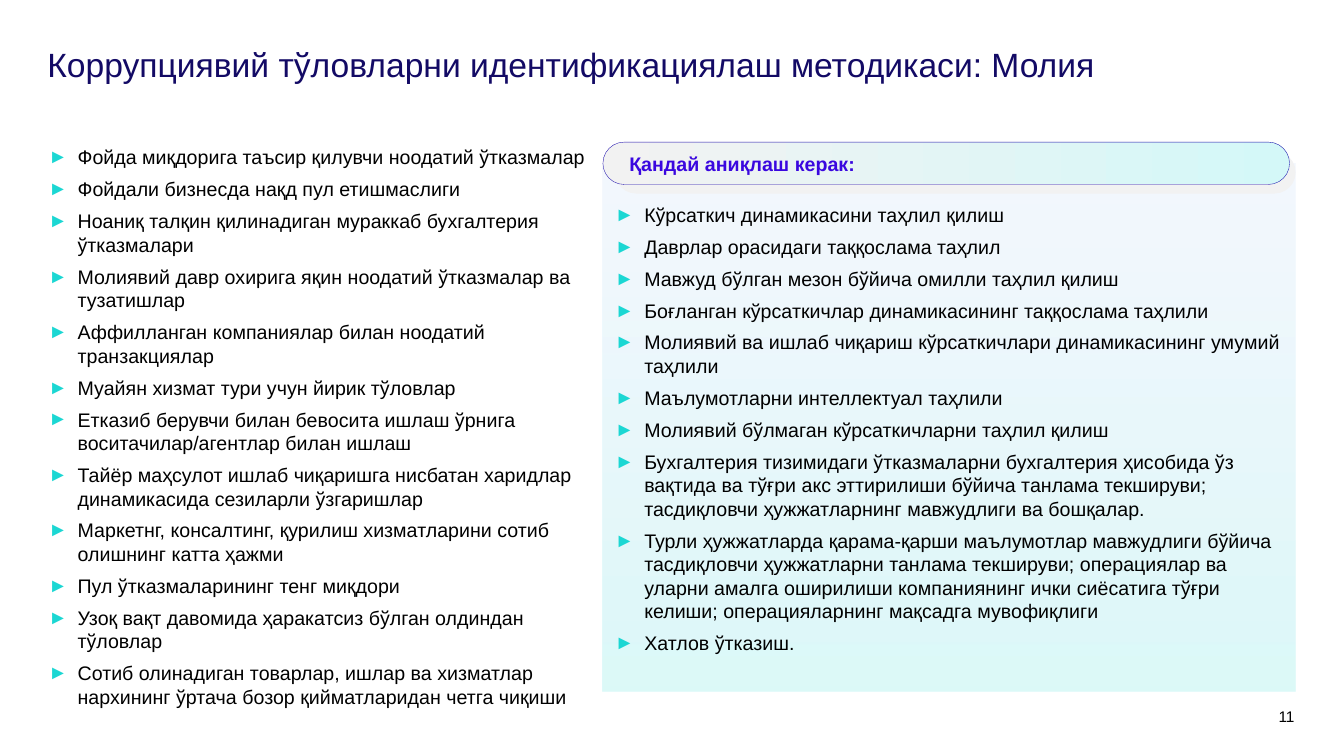
from dataclasses import dataclass

from lxml.etree import SubElement
from pptx import Presentation
from pptx.dml.color import RGBColor
from pptx.enum.shapes import MSO_SHAPE
from pptx.enum.text import MSO_ANCHOR, PP_ALIGN
from pptx.oxml.ns import qn
from pptx.util import Inches, Pt

COLORS = {
    "text": "000000", "title": "130A65", "heading": "3A07DF", "outline": "2112AE",
    "bullet": "1BD7D3", "gray": "F2F2F2", "pale": "D4F8F8",
    "panel_top": "B1C7F7", "panel_bottom": "1BD7D3",
}
FONT = "Arial"
BULLET_INDENT = 0.29

WARNING_SIGNS = [
    "Фойда миқдорига таъсир қилувчи ноодатий ўтказмалар",
    "Фойдали бизнесда нақд пул етишмаслиги",
    "Ноаниқ талқин қилинадиган мураккаб бухгалтерия ўтказмалари",
    "Молиявий давр охирига яқин ноодатий ўтказмалар ва тузатишлар",
    "Аффилланган компаниялар билан ноодатий транзакциялар",
    "Муайян хизмат тури учун йирик тўловлар",
    "Етказиб берувчи билан бевосита ишлаш ўрнига воситачилар/агентлар билан ишлаш",
    "Тайёр маҳсулот ишлаб чиқаришга нисбатан харидлар динамикасида сезиларли ўзгаришлар",
    "Маркетнг, консалтинг, қурилиш хизматларини сотиб олишнинг катта ҳажми",
    "Пул ўтказмаларининг тенг миқдори",
    "Узоқ вақт давомида ҳаракатсиз бўлган олдиндан тўловлар",
    "Сотиб олинадиган товарлар, ишлар ва хизматлар нархининг ўртача бозор "
    "қийматларидан четга чиқиши",
]
DETECTION_METHODS = [
    "Кўрсаткич динамикасини таҳлил қилиш",
    "Даврлар орасидаги таққослама таҳлил",
    "Мавжуд бўлган мезон бўйича омилли таҳлил қилиш",
    "Боғланган кўрсаткичлар динамикасининг таққослама таҳлили",
    "Молиявий ва ишлаб чиқариш кўрсаткичлари динамикасининг умумий таҳлили",
    "Маълумотларни интеллектуал таҳлили",
    "Молиявий бўлмаган кўрсаткичларни таҳлил қилиш",
    "Бухгалтерия тизимидаги ўтказмаларни бухгалтерия ҳисобида ўз вақтида ва тўғри акс "
    "эттирилиши бўйича танлама текшируви; тасдиқловчи ҳужжатларнинг мавжудлиги ва бошқалар.",
    "Турли ҳужжатларда қарама-қарши маълумотлар мавжудлиги бўйича тасдиқловчи ҳужжатларни "
    "танлама текшируви; операциялар ва уларни амалга оширилиши компаниянинг ички сиёсатига "
    "тўғри келиши; операцияларнинг мақсадга мувофиқлиги",
    "Хатлов ўтказиш.",
]


@dataclass(frozen=True)
class Box:
    left: float
    top: float
    width: float
    height: float

    def lengths(self):
        return [Inches(value) for value in (self.left, self.top, self.width, self.height)]


@dataclass(frozen=True)
class Stop:
    position: float
    color: str
    opacity: int = 100


def color(name: str) -> RGBColor:
    return RGBColor.from_string(COLORS[name])


def add_bullet(paragraph) -> None:
    properties = paragraph._p.get_or_add_pPr()
    properties.set("marL", str(Inches(BULLET_INDENT)))
    properties.set("indent", str(-Inches(BULLET_INDENT)))
    bullet_color = SubElement(properties, qn("a:buClr"))
    SubElement(bullet_color, qn("a:srgbClr"), val=COLORS["bullet"])
    SubElement(properties, qn("a:buFont"), typeface=FONT)
    SubElement(properties, qn("a:buChar"), char="►")


def write_text(shape, *texts: str, size: float = 14, ink: str = "text", bold: bool = False,
               align=PP_ALIGN.LEFT, anchor=MSO_ANCHOR.TOP, insets=(0, 0, 0, 0),
               bullets: bool = False, line_spacing=None) -> None:
    """Fill a shape with paragraphs; insets are left, top, right, bottom in inches."""
    frame = shape.text_frame
    frame.word_wrap = True
    frame.vertical_anchor = anchor
    (frame.margin_left, frame.margin_top,
     frame.margin_right, frame.margin_bottom) = map(Inches, insets)
    for index, text in enumerate(texts):
        paragraph = frame.add_paragraph() if index else frame.paragraphs[0]
        if bullets:
            add_bullet(paragraph)
            paragraph.space_after = Pt(6)
        paragraph.alignment = align
        if line_spacing:
            paragraph.line_spacing = line_spacing
        run = paragraph.add_run()
        run.text = text
        run.font.name, run.font.size, run.font.bold = FONT, Pt(size), bold
        run.font.color.rgb = color(ink)


def add_panel(slide, kind, box: Box, stops: list[Stop], angle: float = 0, outline: str = ""):
    """Add a shape with a solid fill for one stop, or a gradient for two."""
    shape = slide.shapes.add_shape(kind, *box.lengths())
    shape.shadow.inherit = False
    if kind == MSO_SHAPE.ROUNDED_RECTANGLE:
        shape.adjustments[0] = 0.5
    if len(stops) == 1:
        shape.fill.solid()
        shape.fill.fore_color.rgb = color(stops[0].color)
    else:
        shape.fill.gradient()
        shape.fill.gradient_angle = angle
        for gradient_stop, stop in zip(shape.fill.gradient_stops, stops):
            gradient_stop.position = stop.position
            gradient_stop.color.rgb = color(stop.color)
            if stop.opacity < 100:
                hex_color = gradient_stop._gs.find(qn("a:srgbClr"))
                SubElement(hex_color, qn("a:alpha"), val=str(stop.opacity * 1000))
    if outline:
        shape.line.color.rgb = color(outline)
        shape.line.width = Pt(0.25)
    else:
        shape.line.fill.background()
    return shape


def add_text_box(slide, box: Box, *texts: str, **text_format) -> None:
    write_text(slide.shapes.add_textbox(*box.lengths()), *texts, **text_format)


def main() -> None:
    presentation = Presentation()
    presentation.slide_width, presentation.slide_height = Inches(13.33), Inches(7.5)
    slide = presentation.slides.add_slide(presentation.slide_layouts[5])

    title = slide.shapes.title
    title.left, title.top, title.width, title.height = Box(0.47, 0.48, 11, 0.48).lengths()
    write_text(title, "Коррупциявий тўловларни идентификациялаш методикаси: Молия",
               size=24, ink="title", line_spacing=0.9)

    add_text_box(slide, Box(12.41, 7.02, 0.43, 0.16), "11", size=11, align=PP_ALIGN.RIGHT)
    add_text_box(slide, Box(0.48, 1.44, 5.33, 5.64), *WARNING_SIGNS, bullets=True)

    methods = add_panel(slide, MSO_SHAPE.RECTANGLE, Box(5.98, 1.62, 6.87, 5.24),
                        [Stop(0.02, "panel_top", 14), Stop(1, "panel_bottom", 15)], angle=270)
    write_text(methods, *DETECTION_METHODS, bullets=True, insets=(0.12, 0.39, 0.1, 0))

    add_panel(slide, MSO_SHAPE.ROUNDED_RECTANGLE, Box(6.1, 1.5, 6.75, 0.42), [Stop(0, "gray")])
    heading = add_panel(slide, MSO_SHAPE.ROUNDED_RECTANGLE, Box(5.98, 1.41, 6.81, 0.42),
                        [Stop(0, "gray"), Stop(1, "pale")], outline="outline")
    write_text(heading, "Қандай аниқлаш керак:", ink="heading", bold=True,
               anchor=MSO_ANCHOR.MIDDLE, insets=(0.2, 0.05, 0.1, 0.05))

    presentation.save("out.pptx")


if __name__ == "__main__":
    main()
